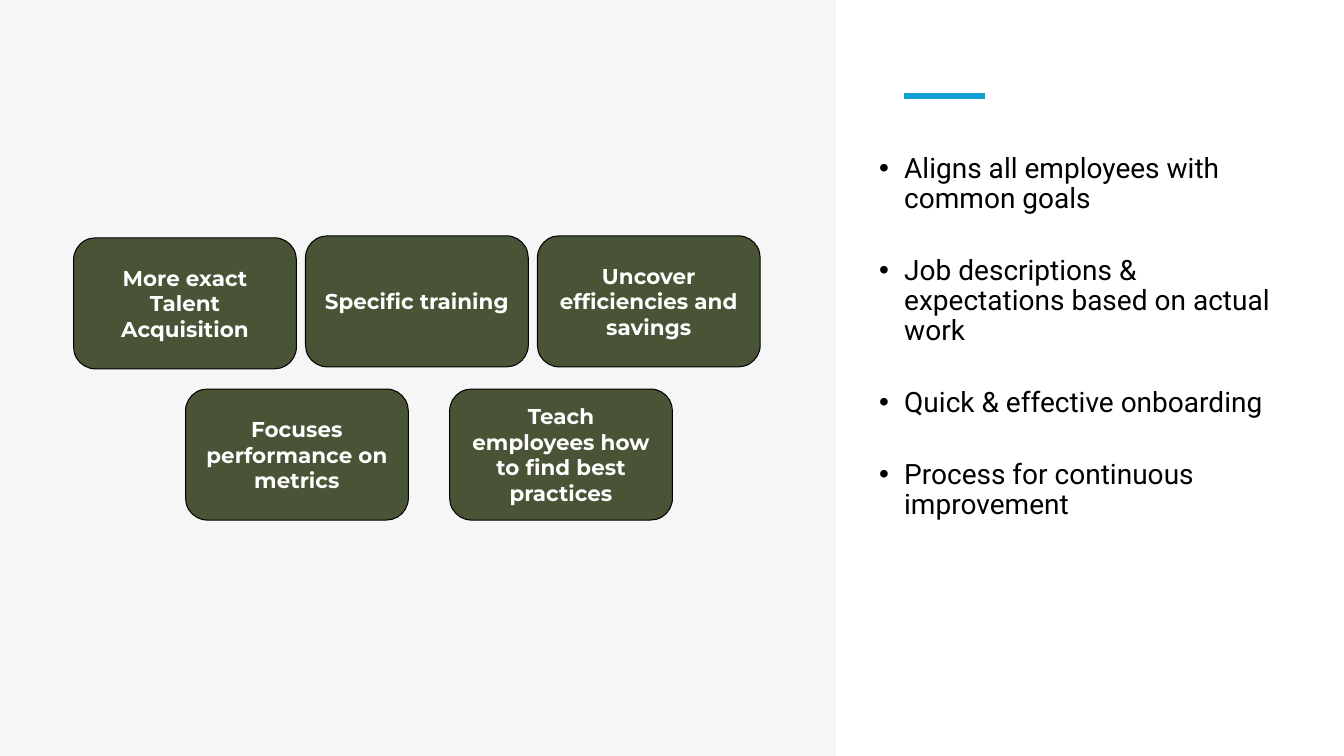
from dataclasses import dataclass

from lxml import etree
from pptx import Presentation
from pptx import util as u
from pptx.dml.color import RGBColor
from pptx.enum import shapes, text
from pptx.oxml.ns import qn


@dataclass(frozen=True)
class Theme:
    panel: str = "F2F2F2"
    panel_opacity: int = 65
    accent: str = "0F9ED5"
    card: str = "495436"
    card_text: str = "FFFFFF"
    ink: str = "000000"
    card_font: str = "Montserrat"
    body_font: str = "Roboto"
    card_size: float = 15.3
    body_size: float = 20


class SlideBuilder:
    def __init__(self, slide, theme):
        self.slide = slide
        self.theme = theme

    def style_run(self, run, font, size, color, bold=False):
        run.font.name = font
        run.font.size = u.Pt(size)
        run.font.bold = bold
        run.font.color.rgb = RGBColor.from_string(color)

    def add_box(self, kind, left, top, width, height, color):
        shape = self.slide.shapes.add_shape(
            kind, u.Inches(left), u.Inches(top), u.Inches(width), u.Inches(height))
        shape.shadow.inherit = False
        shape.fill.solid()
        shape.fill.fore_color.rgb = RGBColor.from_string(color)
        return shape

    def add_panel(self, left, top, width, height):
        shape = self.add_box(shapes.MSO_SHAPE.RECTANGLE, left, top, width, height,
                             self.theme.panel)
        shape.line.fill.background()
        color = shape._element.spPr.find(f"{qn('a:solidFill')}/{qn('a:srgbClr')}")
        etree.SubElement(color, qn("a:alpha"), val=str(self.theme.panel_opacity * 1000))

    def add_rule(self, left, top, width):
        rule = self.slide.shapes.add_connector(
            shapes.MSO_CONNECTOR.STRAIGHT, u.Inches(left), u.Inches(top),
            u.Inches(left + width), u.Inches(top))
        rule.line.color.rgb = RGBColor.from_string(self.theme.accent)
        rule.line.width = u.Pt(4.5)
        etree.SubElement(rule._element.spPr, qn("a:effectLst"))

    def add_card(self, left, top, width, height, label):
        theme = self.theme
        shape = self.add_box(shapes.MSO_SHAPE.ROUNDED_RECTANGLE, left, top, width, height,
                             theme.card)
        shape.line.color.rgb = RGBColor.from_string(theme.ink)
        shape.line.width = u.Pt(0.75)
        frame = shape.text_frame
        frame.text = label
        frame.word_wrap = True
        frame.vertical_anchor = text.MSO_ANCHOR.MIDDLE
        paragraph = frame.paragraphs[0]
        paragraph.alignment = text.PP_ALIGN.CENTER
        paragraph.space_after = u.Pt(6)
        self.style_run(paragraph.runs[0], theme.card_font, theme.card_size,
                       theme.card_text, bold=True)

    def add_bullets(self, left, top, width, height, items):
        theme = self.theme
        box = self.slide.shapes.add_textbox(
            u.Inches(left), u.Inches(top), u.Inches(width), u.Inches(height))
        frame = box.text_frame
        frame.word_wrap = True
        frame.text = "\n".join(items)
        for index, paragraph in enumerate(frame.paragraphs):
            paragraph.line_spacing = 0.9
            paragraph.space_before = u.Pt(29.7 if index else 4)
            properties = paragraph._p.get_or_add_pPr()
            properties.set("marL", str(u.Inches(0.44)))
            properties.set("indent", str(u.Inches(-0.25)))
            etree.SubElement(properties, qn("a:buFont"), typeface="Arial")
            etree.SubElement(properties, qn("a:buChar"), char="•")
            self.style_run(paragraph.runs[0], theme.body_font, theme.body_size, theme.ink)


CARD_WIDTH, CARD_HEIGHT = 2.21, 1.3
TOP_LEFT, TOP_PITCH = 0.73, 2.3
BOTTOM_LEFT, BOTTOM_PITCH, BOTTOM_TOP = 1.84, 2.62, 3.86

# The first card sits slightly lower than its neighbours
TOP_CARDS = [
    ("More exact Talent Acquisition", 2.36),
    ("Specific training", 2.34),
    ("Uncover efficiencies and savings", 2.34),
]
BOTTOM_CARDS = [
    "Focuses performance on metrics",
    "Teach employees how to find best practices",
]
BENEFITS = [
    "Aligns all employees with common goals",
    "Job descriptions & expectations based on actual work",
    "Quick & effective onboarding",
    "Process for continuous improvement",
]


def main():
    presentation = Presentation()
    presentation.slide_width = u.Inches(13.33)
    presentation.slide_height = u.Inches(7.5)
    slide = presentation.slides.add_slide(presentation.slide_layouts[6])
    builder = SlideBuilder(slide, Theme())

    # Left panel and accent rule
    builder.add_panel(0, 0, 8.29, 7.5)
    builder.add_rule(8.97, 0.95, 0.8)

    # Benefits list
    builder.add_bullets(8.43, 1.48, 4.3, 4.97, BENEFITS)

    # Two rows of cards
    for column, (label, top) in enumerate(TOP_CARDS):
        builder.add_card(TOP_LEFT + column * TOP_PITCH, top, CARD_WIDTH, CARD_HEIGHT, label)
    for column, label in enumerate(BOTTOM_CARDS):
        builder.add_card(BOTTOM_LEFT + column * BOTTOM_PITCH, BOTTOM_TOP,
                         CARD_WIDTH, CARD_HEIGHT, label)

    presentation.save("out.pptx")


if __name__ == "__main__":
    main()
